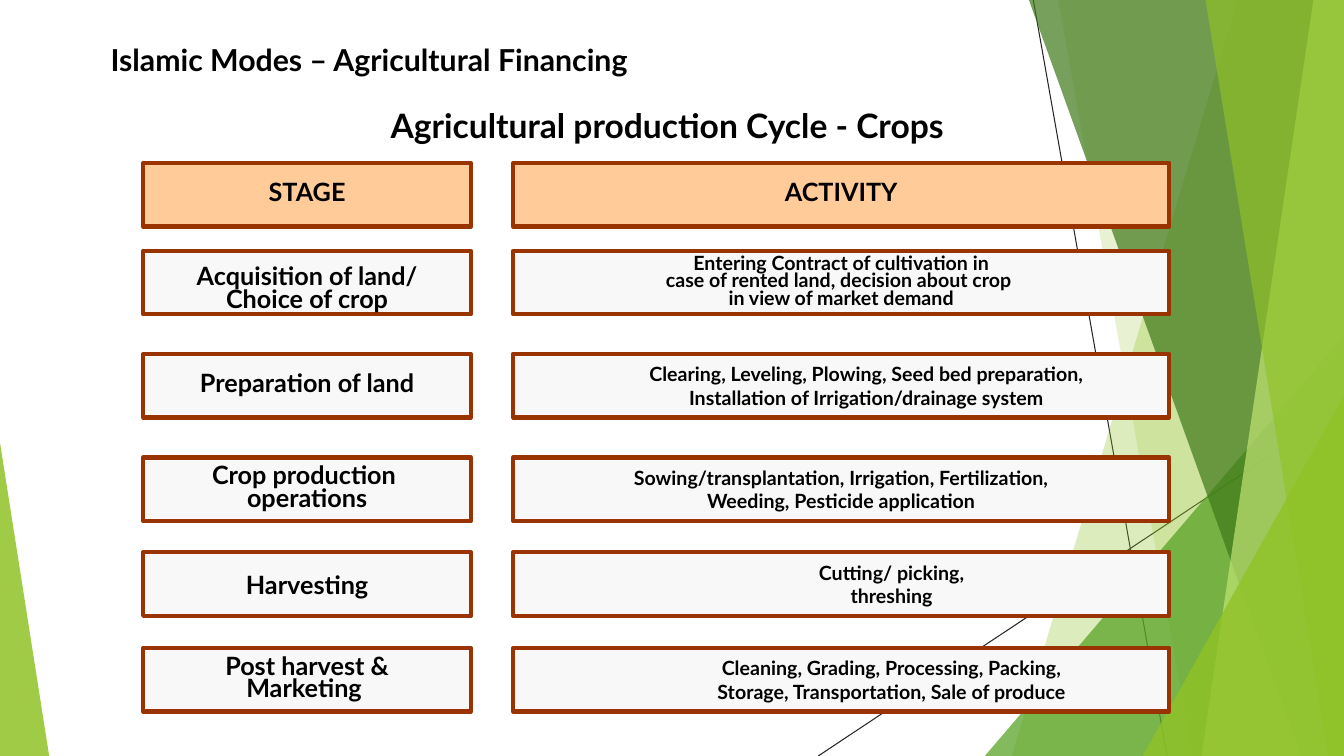
from lxml import etree
from pptx import Presentation
from pptx.dml.color import RGBColor
from pptx.enum.shapes import MSO_CONNECTOR, MSO_SHAPE
from pptx.enum.text import MSO_ANCHOR, PP_ALIGN
from pptx.oxml.ns import qn
from pptx.util import Cm, Pt

STRAIGHT = MSO_CONNECTOR.STRAIGHT
RECTANGLE = MSO_SHAPE.RECTANGLE
TRIANGLE = MSO_SHAPE.ISOSCELES_TRIANGLE
MIDDLE, TOP = MSO_ANCHOR.MIDDLE, MSO_ANCHOR.TOP
LEFT, CENTER = PP_ALIGN.LEFT, PP_ALIGN.CENTER

FONT = "Lato"
WIDTH, HEIGHT = 33.87, 19.05
COLORS = {
    "text": "000000",
    "thin_line": "262626",
    "border": "993300",
    "header": "FFCC99",
    "cell": "F8F8F8",
    "lime": "90C226",
    "green": "54A021",
    "forest": "3F7819",
    "pale": "C0E474",
}

HEADER = ("STAGE", "ACTIVITY")
ROWS = [
    (6.32, "Acquisition of land/\nChoice of crop",
     "Entering Contract of cultivation in\n"
     "case of rented land, decision about crop \n"
     "in view of market demand",
     {"margin_top": 0.4, "margin_bottom": 0}, {"spacing": 0.75}),
    (8.92, "Preparation of land",
     "Clearing, Leveling, Plowing, Seed bed preparation,\n"
     "Installation of Irrigation/drainage system",
     {}, {"indent": 1.27}),
    (11.53, "Crop production \noperations",
     "Sowing/transplantation, Irrigation, Fertilization,\n"
     "Weeding, Pesticide application",
     {}, {}),
    (13.92, "Harvesting", "Cutting/ picking,\nthreshing",
     {"spacing": 1}, {"indent": 2.54}),
    (16.33, "Post harvest &\nMarketing ",
     "Cleaning, Grading, Processing, Packing,\n"
     "Storage, Transportation, Sale of produce",
     {}, {"indent": 2.54}),
]


def color(name):
    return RGBColor.from_string(COLORS[name])


def write_text(shape, text, size=18, align=CENTER, anchor=MIDDLE, wrap=False,
               spacing=1, indent=0, margin_top=0.13, margin_bottom=0.13):
    frame = shape.text_frame
    frame.word_wrap = wrap
    frame.vertical_anchor = anchor
    frame.margin_top, frame.margin_bottom = Cm(margin_top), Cm(margin_bottom)
    for number, line in enumerate(text.split("\n")):
        paragraph = frame.add_paragraph() if number else frame.paragraphs[0]
        paragraph.alignment = align
        paragraph.line_spacing = spacing
        if indent:
            properties = paragraph._p.get_or_add_pPr()
            properties.set("marL", str(Cm(indent)))
            properties.set("indent", "0")
        run = paragraph.add_run()
        run.text = line
        run.font.name = FONT
        run.font.size = Pt(size)
        run.font.bold = True
        run.font.color.rgb = color("text")


def paint_facet(shape, fill, opacity):
    shape.shadow.inherit = False
    shape.line.fill.background()
    shape.fill.solid()
    shape.fill.fore_color.rgb = color(fill)
    solid_color = shape.fill._xPr.find(qn("a:solidFill"))[0]
    etree.SubElement(solid_color, qn("a:alpha")).set("val", str(opacity * 1000))


def add_thin_line(slide, start_x, start_y, end_x, end_y):
    line = slide.shapes.add_connector(
        STRAIGHT, Cm(start_x), Cm(start_y), Cm(end_x), Cm(end_y))
    line.line.color.rgb = color("thin_line")
    line.line.width = Pt(0.75)
    etree.SubElement(line._element.spPr, qn("a:effectLst"))


def add_band(slide, top_x, bottom_x, fill, opacity, width, height):
    builder = slide.shapes.build_freeform(Cm(top_x), 0)
    builder.add_line_segments([
        (Cm(width), 0), (Cm(width), Cm(height)), (Cm(bottom_x), Cm(height))])
    paint_facet(builder.convert_to_shape(), fill, opacity)


def add_corner(slide, left, top, right, apex, fill, opacity, height):
    triangle = slide.shapes.add_shape(
        TRIANGLE, Cm(left), Cm(top), Cm(right - left), Cm(height - top))
    triangle.adjustments[0] = apex
    paint_facet(triangle, fill, opacity)


def add_backdrop(slide, width, height):
    add_thin_line(slide, 26.04, 0, 29.41, height)
    add_thin_line(slide, width, 10.24, 20.62, height)
    add_band(slide, 31.19, 25.5, "lime", 30, width, height)
    add_band(slide, 26.67, 30.05, "lime", 20, width, height)
    add_corner(slide, 24.82, 8.46, width, 1, "green", 72, height)
    add_band(slide, 25.93, 32.79, "forest", 70, width, height)
    add_band(slide, 33.1, 30.28, "pale", 70, width, height)
    add_band(slide, 30.38, 33.48, "lime", 65, width, height)
    add_corner(slide, 28.8, 9.98, width, 1, "lime", 80, height)
    add_corner(slide, 0, 11.15, 1.24, 0, "lime", 85, height)


def add_heading(slide, text, left, top, width, height, **text_format):
    box = slide.shapes.add_textbox(Cm(left), Cm(top), Cm(width), Cm(height))
    write_text(box, text, wrap=True, **text_format)


def add_cell(slide, text, left, top, width, fill, **text_format):
    cell = slide.shapes.add_shape(
        RECTANGLE, Cm(left), Cm(top), Cm(width), Cm(1.6))
    cell.shadow.inherit = False
    cell.fill.solid()
    cell.fill.fore_color.rgb = color(fill)
    cell.line.color.rgb = color("border")
    cell.line.width = Pt(3)
    write_text(cell, text, **text_format)


def add_cycle(slide, left, top, width):
    stage_width, gap = 8.26, 1.06
    activity_left = left + stage_width + gap
    activity_width = width - stage_width - gap
    stage, activity = HEADER
    add_cell(slide, stage, left, top, stage_width, "header", spacing=0.75)
    add_cell(slide, activity, activity_left, top, activity_width, "header",
             spacing=0.75)
    for row_top, stage, activity, stage_format, activity_format in ROWS:
        add_cell(slide, stage, left, row_top, stage_width, "cell",
                 **{"spacing": 0.75, **stage_format})
        add_cell(slide, activity, activity_left, row_top, activity_width,
                 "cell", size=14, **activity_format)


def main():
    presentation = Presentation()
    presentation.slide_width, presentation.slide_height = Cm(WIDTH), Cm(HEIGHT)
    slide = presentation.slides.add_slide(presentation.slide_layouts[6])
    add_backdrop(slide, WIDTH, HEIGHT)
    add_heading(slide, "Islamic Modes – Agricultural Financing",
                2.54, 0.91, 28.78, 1.19, size=21.6, align=LEFT)
    add_heading(slide, "Agricultural production Cycle - Crops",
                0.94, 2.51, 31.75, 1.4, size=24, anchor=TOP)
    add_cycle(slide, 3.61, 4.11, 25.86)
    presentation.save("out.pptx")


if __name__ == "__main__":
    main()
